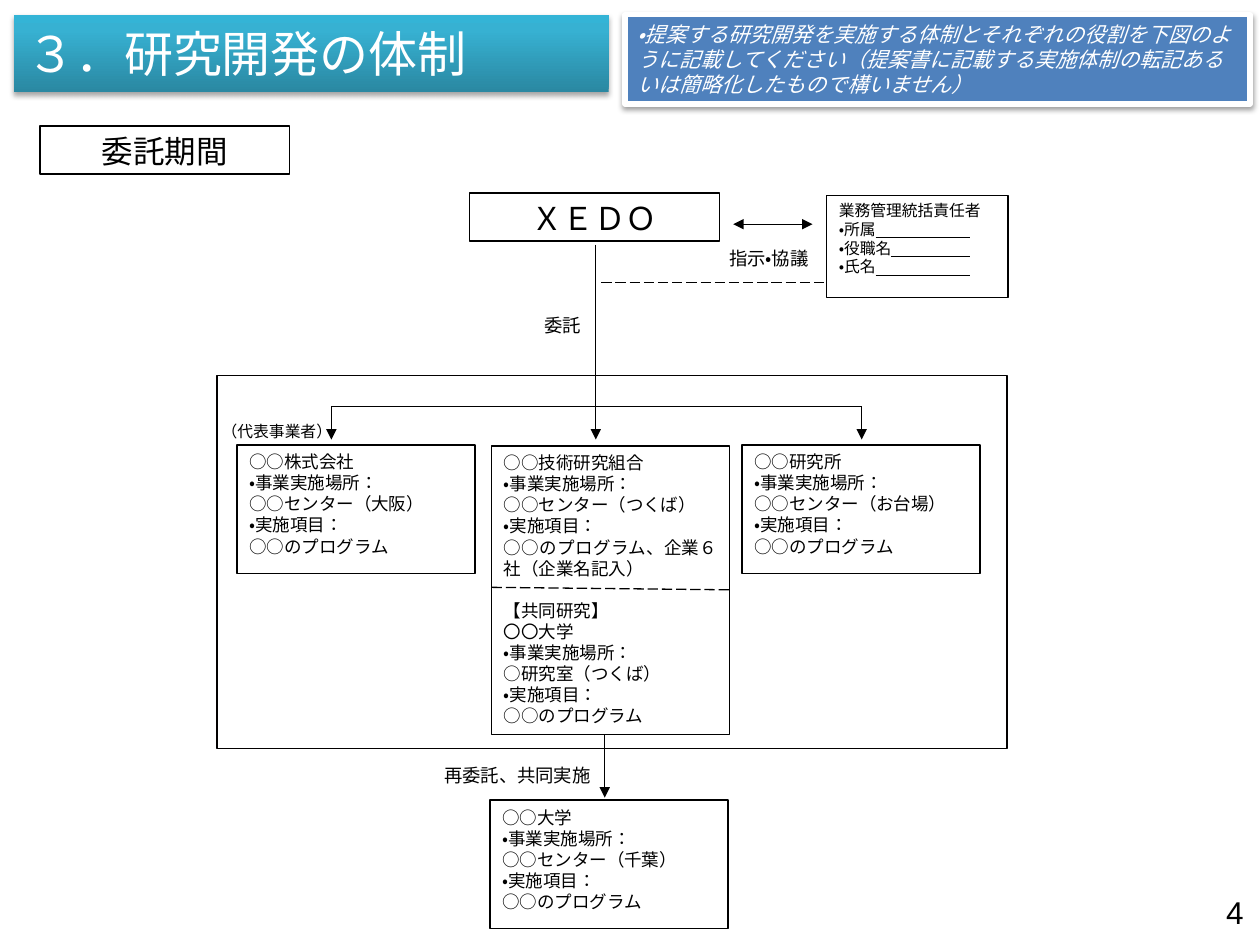
from lxml.etree import SubElement
from pptx import Presentation
from pptx.dml.color import RGBColor
from pptx.enum.dml import MSO_LINE
from pptx.enum.lang import MSO_LANGUAGE_ID
from pptx.enum.shapes import MSO_CONNECTOR, MSO_SHAPE
from pptx.enum.text import MSO_ANCHOR, PP_ALIGN
from pptx.oxml.ns import qn
from pptx.util import Cm, Pt

# Content
TITLE = "３．研究開発の体制"
NOTE = ("・提案する研究開発を実施する体制とそれぞれの役割を下図のように記載してください"
        "（提案書に記載する実施体制の転記あるいは簡略化したもので構いません）")
MANAGER = ["業務管理統括責任者", ("・所属", "　" * 6), ("・役職名", "　" * 5), ("・氏名", "　" * 6)]


def org(name, place, work="○○のプログラム"):
    return [name, "・事業実施場所：", place, "・実施項目：", work]


COMPANY = org("○○株式会社", "○○センター（大阪）")
UNION = org("○○技術研究組合", "○○センター（つくば）", "○○のプログラム、企業６社（企業名記入）")
JOINT = ["【共同研究】"] + org("〇〇大学", "○研究室（つくば）")
INSTITUTE = org("○○研究所", "○○センター（お台場）")
SUBCONTRACTOR = org("○○大学", "○○センター（千葉）")

# Positions in cm: left, top, width, height
HEADINGS = [("ＸＥＤＯ", 9.47, 3.89), ("委託期間", 0.81, 2.54)]
BOX_W, BOX_H = 4.8, 2.59
BOXES = [
    (COMPANY, (4.78, 8.97, BOX_W, BOX_H)),
    (UNION + JOINT, (9.91, 8.99, BOX_W, 5.82)),
    (INSTITUTE, (14.96, 8.97, BOX_W, BOX_H)),
    (SUBCONTRACTOR, (9.88, 16.13, BOX_W, BOX_H)),
]
LABELS = [
    ("指示・協議", (14.45, 4.85, 2.59, 0.84), 10.5),
    ("委託", (10.72, 6.2, 1.4, 0.84), 10.5),
    ("再委託、共同実施", (8.71, 15.27, 3.56, 0.71), 10.5),
    ("（代表事業者）", (4.22, 8.38, 2.97, 0.74), 9),
]
TRUNK_X, LEFT_X, RIGHT_X, BRANCH_Y, TIP_Y = 12.01, 6.68, 17.37, 8.2, 8.86
# x1, y1, x2, y2, arrowheads, dashed
LINES = [
    (14.78, 4.52, 16.38, 4.52, ("headEnd", "tailEnd"), False),
    (12.12, 5.69, 16.66, 5.69, (), True),
    (TRUNK_X, 4.93, TRUNK_X, TIP_Y, ("tailEnd",), False),
    (LEFT_X, BRANCH_Y, LEFT_X, TIP_Y, ("tailEnd",), False),
    (RIGHT_X, BRANCH_Y, RIGHT_X, TIP_Y, ("tailEnd",), False),
    (LEFT_X, BRANCH_Y, RIGHT_X, BRANCH_Y, (), False),
    (9.91, 11.84, 14.71, 11.89, (), True),
    (12.19, 14.81, 12.19, 16.08, ("tailEnd",), False),
]

prs = Presentation()
prs.slide_width, prs.slide_height = Cm(25.4), Cm(19.05)
s = prs.slides.add_slide(prs.slide_layouts[6])


def color(value):
    return RGBColor.from_string(value)


def write(sp, text, size=10, fill="000000", align=PP_ALIGN.JUSTIFY, italic=None,
          anchor=MSO_ANCHOR.TOP, margins=(0.25, 0.13), wrap=True):
    """Write paragraphs; in a tuple, the second part is underlined."""
    tf = sp.text_frame
    tf.word_wrap = wrap
    tf.vertical_anchor = anchor
    tf.margin_left = tf.margin_right = Cm(margins[0])
    tf.margin_top = tf.margin_bottom = Cm(margins[1])
    for i, line in enumerate([text] if isinstance(text, str) else text):
        p = tf.add_paragraph() if i else tf.paragraphs[0]
        p.alignment = align
        for j, part in enumerate([line] if isinstance(line, str) else line):
            r = p.add_run()
            r.text = part
            f = r.font
            f.name, f.size, f.italic = "Arial", Pt(size), italic
            f.language_id = MSO_LANGUAGE_ID.JAPANESE
            f.color.rgb = color(fill)
            if j:
                f.underline = True
    return tf


def rect(at, fill="FFFFFF", line="000000", width=0.75):
    sp = s.shapes.add_shape(MSO_SHAPE.RECTANGLE, *map(Cm, at))
    sp.shadow.inherit = False
    if fill:
        sp.fill.solid()
        sp.fill.fore_color.rgb = color(fill)
    else:
        sp.fill.background()
    if line:
        sp.line.color.rgb = color(line)
        sp.line.width = Pt(width)
    else:
        sp.line.fill.background()
    return sp


def label(text, at, **style):
    return write(s.shapes.add_textbox(*map(Cm, at)), text, **style)


def drop_shadow(sp, alpha, distance):
    effects = sp._element.spPr.find(qn("a:effectLst"))
    shadow = SubElement(effects, qn("a:outerShdw"), blurRad=str(Pt(3.1)),
                        dist=str(Pt(distance)), dir="5400000", rotWithShape="0")
    clr = SubElement(shadow, qn("a:srgbClr"), val="000000")
    SubElement(clr, qn("a:alpha"), val=str(alpha * 1000))


def gradient(sp, stops):
    sp.fill.gradient()
    sp.fill.gradient_angle = 90
    gs_list = sp._element.spPr.find(qn("a:gradFill")).find(qn("a:gsLst"))
    for gs in list(gs_list):
        gs_list.remove(gs)
    for pos, value in stops:
        gs = SubElement(gs_list, qn("a:gs"), pos=str(pos * 1000))
        SubElement(gs, qn("a:srgbClr"), val=value)


def connect(x1, y1, x2, y2, heads, dashed):
    c = s.shapes.add_connector(MSO_CONNECTOR.STRAIGHT, *map(Cm, (x1, y1, x2, y2)))
    c.line.color.rgb = color("000000")
    c.line.width = Pt(0.75)
    if dashed:
        c.line.dash_style = MSO_LINE.LONG_DASH
    for head in heads:
        SubElement(c.line._get_or_add_ln(), qn("a:" + head), type="triangle")
    SubElement(c._element.spPr, qn("a:effectLst"))


# Title bar and instruction
bar = rect((0.28, 0.3, 11.99, 1.55), line=None)
gradient(bar, [(0, "2A88A2"), (80, "37B1D2"), (100, "34B4D6")])
drop_shadow(bar, 35, 1.8)
write(bar, TITLE, size=28, fill="FFFFFF", align=PP_ALIGN.LEFT, anchor=MSO_ANCHOR.MIDDLE)
note = rect((12.6, 0.3, 12.6, 1.8), fill="4F81BD", line="FFFFFF", width=3)
drop_shadow(note, 38, 1.6)
write(note, NOTE, size=12, fill="FFFFFF", align=PP_ALIGN.LEFT, italic=True)

# Headings, manager and organisations
for text, x, y in HEADINGS:
    write(rect((x, y, 5.03, 0.97)), text, size=18, align=PP_ALIGN.CENTER)
write(rect((16.66, 3.94, 3.66, 2.06)), MANAGER, size=9, margins=(0.25, 0.1))
for text, at in BOXES:
    tf = write(rect(at), text)
    if len(text) > len(UNION):
        tf.paragraphs[len(UNION)].space_before = Pt(12)

# Lines, labels and the consortium frame
for line in LINES:
    connect(*line)
for text, at, size in LABELS:
    label(text, at, size=size)
rect((4.37, 7.57, 15.93, 7.52), fill=None, line="020000", width=1)

# Page number
label("4", (23.6, 18.06, 1.47, 0.64), size=18, align=PP_ALIGN.RIGHT,
      anchor=MSO_ANCHOR.MIDDLE, margins=(0, 0), wrap=False)

prs.save("out.pptx")
